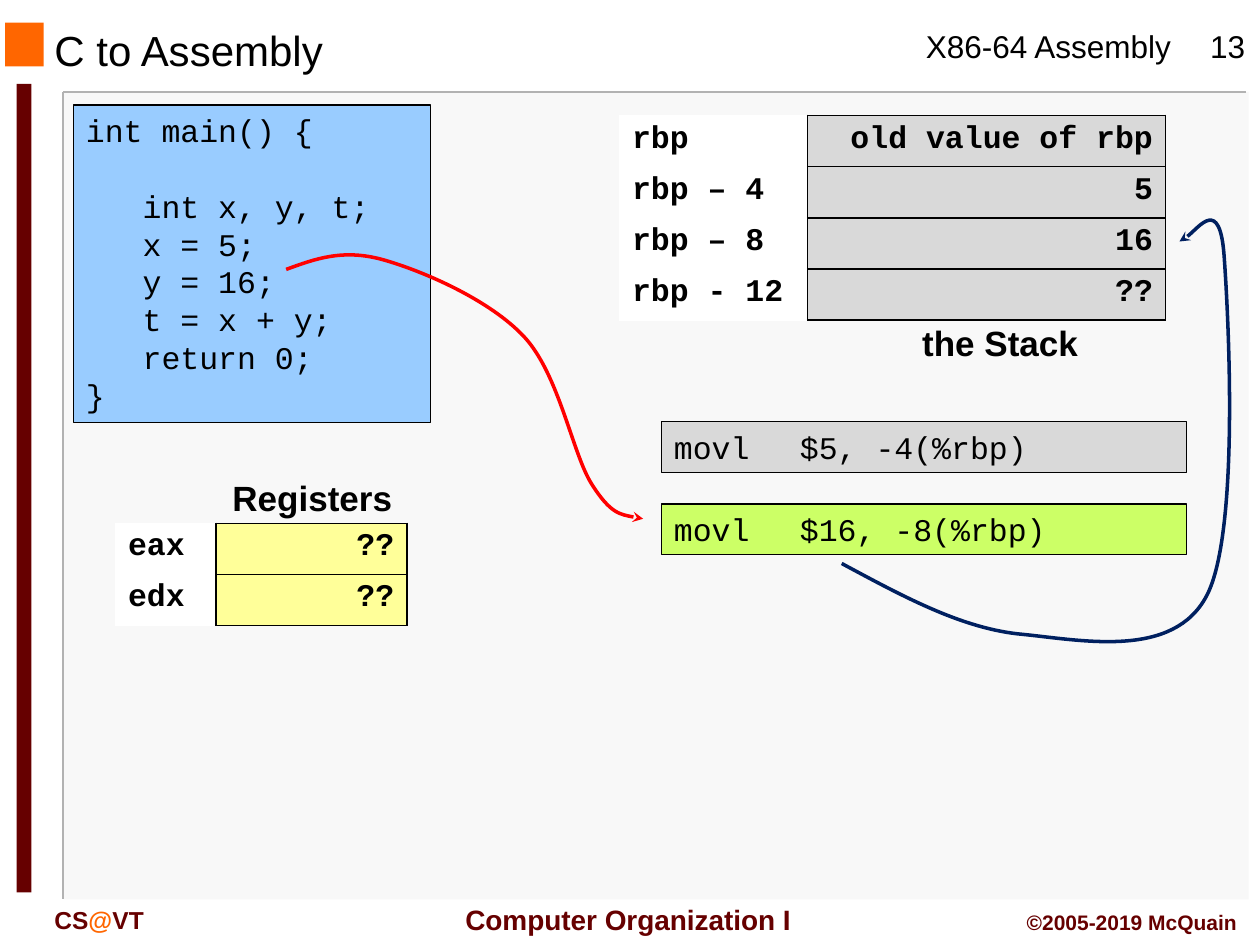
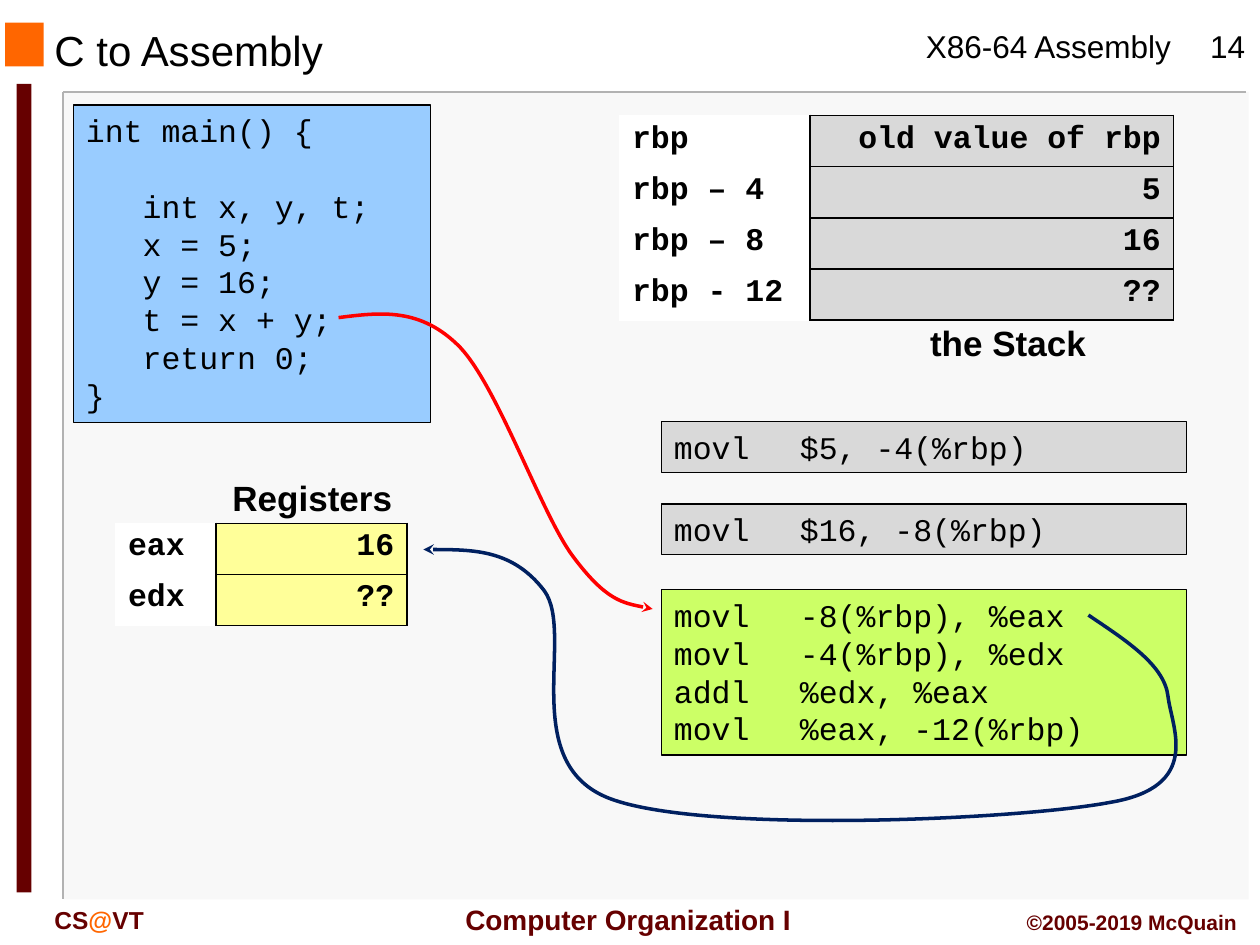
from dataclasses import dataclass

from lxml.etree import SubElement
from pptx import Presentation
from pptx.dml.color import RGBColor
from pptx.enum.shapes import MSO_CONNECTOR, MSO_SHAPE
from pptx.enum.text import MSO_ANCHOR, PP_ALIGN
from pptx.oxml.ns import qn
from pptx.util import Pt


@dataclass(frozen=True)
class Theme:
    sans: str = "Arial"
    mono: str = "Courier New"
    black: str = "000000"
    white: str = "FFFFFF"
    panel: str = "F8F8F8"
    rule: str = "B2B2B2"
    orange: str = "FF6600"
    maroon: str = "660000"
    source: str = "99CCFF"
    memory: str = "D9D9D9"
    register: str = "FFFF99"
    current: str = "CCFF66"
    compile_arrow: str = "FF0000"
    store_arrow: str = "002060"
    title: int = 24
    label: int = 20
    body: int = 18
    course: int = 16
    dept: int = 14
    credit: int = 12
    code_pitch: float = 21.6
    code_indent: float = 32.4


class Deck:
    def __init__(self, theme):
        self.t = theme
        self.prs = Presentation()
        self.prs.slide_width, self.prs.slide_height = Pt(720), Pt(540)
        self.s = None

    def new_slide(self, number):
        t = self.t
        self.s = self.prs.slides.add_slide(self.prs.slide_layouts[6])
        self.box(36.5, 52.5, 677, 461.5, t.panel)
        self.line(36, 52.5, 712, 52.5, t.rule)
        self.line(36, 52.5, 36, 514, t.rule)
        self.box(3, 13, 22, 25, t.orange)
        self.box(9.5, 48, 8.5, 462, t.maroon)
        self.text(522, 12, 156, 29, [("X86-64 Assembly", t.black)], t.body, wrap=False)
        self.text(677.5, 12, 48, 29, [(str(number), t.black)], t.body, PP_ALIGN.CENTER)
        self.text(254, 512, 210, 26.5, [("Computer Organization I", t.maroon)], t.course,
                  PP_ALIGN.CENTER, bold=True, anchor=MSO_ANCHOR.MIDDLE, wrap=False)
        self.text(24, 513.5, 108, 24, [("CS", t.maroon), ("@", t.orange), ("VT", t.maroon)],
                  t.dept, bold=True)
        self.text(564, 516, 150, 22, [("©2005-2019 McQuain", t.maroon)], t.credit,
                  PP_ALIGN.RIGHT, bold=True)
        self.text(24, 14.5, 456, 27.5, [("C to Assembly", t.black)], t.title,
                  anchor=MSO_ANCHOR.MIDDLE)

    def run(self, p, text, size, color, font, bold=False):
        r = p.add_run()
        r.text = text
        r.font.name, r.font.size, r.font.bold = font, Pt(size), bold
        r.font.color.rgb = RGBColor.from_string(color)

    def text(self, x, y, w, h, runs, size, align=PP_ALIGN.LEFT, bold=False,
             anchor=MSO_ANCHOR.TOP, wrap=True):
        tf = self.s.shapes.add_textbox(Pt(x), Pt(y), Pt(w), Pt(h)).text_frame
        tf.word_wrap, tf.vertical_anchor = wrap, anchor
        p = tf.paragraphs[0]
        p.alignment = align
        for text, color in runs:
            self.run(p, text, size, color, self.t.sans, bold)

    def label(self, x, y, text):
        self.text(x, y, 141, 31.5, [(text, self.t.black)], self.t.label,
                  PP_ALIGN.CENTER, bold=True)

    def box(self, x, y, w, h, fill, outline=None):
        sp = self.s.shapes.add_shape(MSO_SHAPE.RECTANGLE, Pt(x), Pt(y), Pt(w), Pt(h))
        sp.shadow.inherit = False
        sp.fill.solid()
        sp.fill.fore_color.rgb = RGBColor.from_string(fill)
        if outline:
            sp.line.color.rgb = RGBColor.from_string(outline)
            sp.line.width = Pt(0.75)
        else:
            sp.line.fill.background()
        return sp

    def line(self, x1, y1, x2, y2, color):
        c = self.s.shapes.add_connector(MSO_CONNECTOR.STRAIGHT, Pt(x1), Pt(y1), Pt(x2), Pt(y2))
        c.line.color.rgb = RGBColor.from_string(color)
        c.line.width = Pt(1)
        SubElement(c._element.spPr, qn("a:effectLst"))

    def code(self, x, y, w, h, lines, fill, indented=(), gap_before=None):
        t = self.t
        tf = self.box(x, y, w, h, fill, t.black).text_frame
        tf.word_wrap, tf.vertical_anchor = True, MSO_ANCHOR.TOP
        for i, text in enumerate(lines):
            p = tf.paragraphs[0] if i == 0 else tf.add_paragraph()
            p.alignment = PP_ALIGN.LEFT
            p.line_spacing = Pt(t.code_pitch)
            if i in indented:
                pPr = p._p.get_or_add_pPr()
                pPr.set("marL", str(Pt(t.code_indent)))
                pPr.set("indent", "0")
            if i == gap_before:
                p.space_before = Pt(t.code_pitch)
            self.run(p, text, t.body, t.black, t.mono)

    def table(self, x, y, widths, rows, value_fill):
        t, row_h = self.t, 29.25
        frame = self.s.shapes.add_table(len(rows), 2, Pt(x), Pt(y), Pt(sum(widths)),
                                        Pt(row_h * len(rows)))
        tbl = frame.table
        tbl.first_row = tbl.horz_banding = False
        for col, width in zip(tbl.columns, widths):
            col.width = Pt(width)
        styles = ((t.white, PP_ALIGN.LEFT, "R"), (value_fill, PP_ALIGN.RIGHT, "LRTB"))
        for i, row in enumerate(rows):
            tbl.rows[i].height = Pt(row_h)
            for j, (fill, align, sides) in enumerate(styles):
                cell = tbl.cell(i, j)
                self.borders(cell, sides)
                cell.fill.solid()
                cell.fill.fore_color.rgb = RGBColor.from_string(fill)
                p = cell.text_frame.paragraphs[0]
                p.alignment = align
                self.run(p, row[j], t.body, t.black, t.mono, bold=True)

    def borders(self, cell, sides):
        tcPr = cell._tc.get_or_add_tcPr()
        for side in sides:
            ln = SubElement(tcPr, qn(f"a:ln{side}"), w=str(Pt(1)))
            SubElement(SubElement(ln, qn("a:solidFill")), qn("a:srgbClr"), val=self.t.black)

    def curve(self, points, color):
        points = [(Pt(x), Pt(y)) for x, y in points]
        fb = self.s.shapes.build_freeform(*points[0])
        fb.add_line_segments(points[1:], close=False)
        sp = fb.convert_to_shape()
        sp.shadow.inherit = False
        sp.fill.background()
        sp.line.color.rgb = RGBColor.from_string(color)
        sp.line.width = Pt(2)
        SubElement(sp.line._get_or_add_ln(), qn("a:tailEnd"), type="stealth")
        segments = list(sp._element.iter(qn("a:lnTo")))
        outline = segments[0].getparent()
        for i in range(0, len(segments), 3):
            bezier = SubElement(outline, qn("a:cubicBezTo"))
            for segment in segments[i:i + 3]:
                bezier.append(segment[0])
                outline.remove(segment)


MAIN_C = ["int main() {", "int x, y, t;", "x = 5;", "y = 16;", "t = x + y;", "return 0;", "}"]
STACK = [("rbp", "old value of rbp"), ("rbp – 4", "5"), ("rbp – 8", "16"), ("rbp - 12", "??")]
STORE_X = ["movl\t$5, -4(%rbp)"]
STORE_Y = ["movl\t$16, -8(%rbp)"]
ADD_XY = ["movl\t-8(%rbp), %eax", "movl\t-4(%rbp), %edx", "addl\t%edx, %eax",
          "movl\t%eax, -12(%rbp)"]
BLOCKS = [(241, 29, STORE_X), (288, 29, STORE_Y), (337, 94.5, ADD_XY)]

STEPS = [
    dict(number=13, blocks=2, eax="??", stack_widths=(107.5, 204.5), stack_label_x=501,
         compile_curve=[(163.5, 154), (180, 148), (196, 142), (219, 148.5), (242, 155),
                        (280, 171.5), (299.5, 192.5), (319.5, 214), (327, 259),
                        (338, 276.5), (349, 294), (358.5, 295), (367.5, 296.5)],
         store_curve=[(481, 322), (515.5, 340.5), (550, 359.5), (584.5, 362.5), (619, 366),
                      (670.5, 376.5), (689.5, 340.5), (708.5, 304.5), (702, 180),
                      (699.5, 146), (697, 112.5), (678.5, 137.5), (674, 138)]),
    dict(number=14, blocks=3, eax="16", stack_widths=(109, 207.5), stack_label_x=505.5,
         compile_curve=[(193.5, 181.5), (217.5, 178.5), (240.5, 175.5), (263, 198.5),
                        (285, 222), (309.5, 294), (327.5, 318), (346.5, 343.5),
                        (360, 345.5), (373, 348)],
         store_curve=[(622, 351.5), (643.5, 366), (665.5, 380), (667.5, 398),
                      (669.5, 415.5), (687.5, 449.5), (634.5, 458.5), (582, 468.5),
                      (403, 476.5), (349, 456.5), (295, 436.5), (329, 362),
                      (311, 337.5), (293, 314), (267, 314), (242, 314)]),
]


def build_step(deck, number, blocks, eax, stack_widths, stack_label_x,
               compile_curve, store_curve):
    t = deck.t
    deck.new_slide(number)
    deck.code(42, 60, 204, 181.5, MAIN_C, t.source, indented=range(1, 6), gap_before=1)
    for i, (y, h, lines) in enumerate(BLOCKS[:blocks], 1):
        deck.code(378, y, 300, h, lines, t.current if i == blocks else t.memory)
    deck.curve(compile_curve, t.compile_arrow)
    deck.table(354, 66, stack_widths, STACK, t.memory)
    deck.table(66, 299, (57.5, 109), [("eax", eax), ("edx", "??")], t.register)
    deck.label(stack_label_x, 180, "the Stack")
    deck.label(108, 268.5, "Registers")
    deck.curve(store_curve, t.store_arrow)


def main():
    deck = Deck(Theme())
    for step in STEPS:
        build_step(deck, **step)
    deck.prs.save("out.pptx")


if __name__ == "__main__":
    main()
